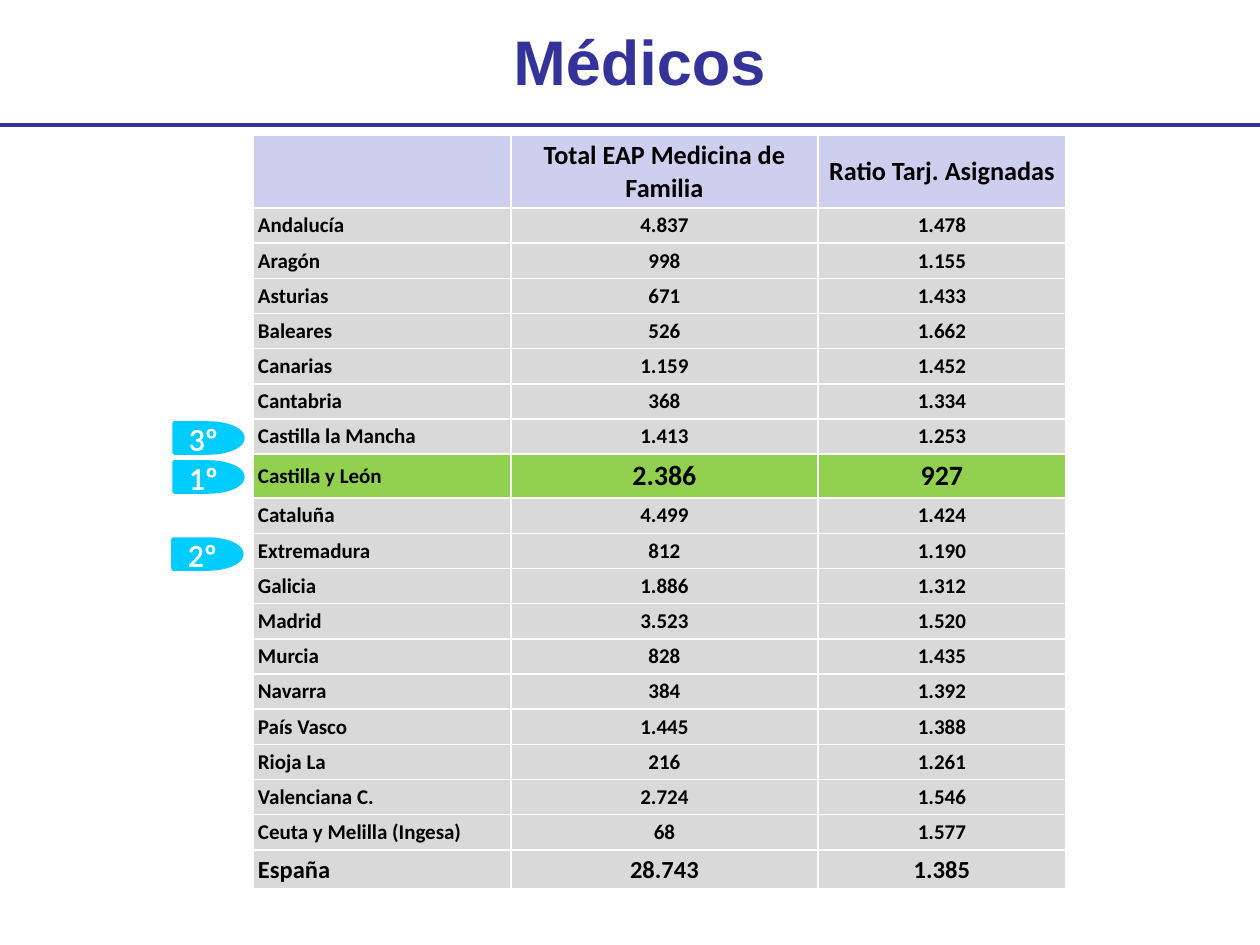
from lxml import etree
from pptx import Presentation
from pptx import util as u
from pptx.dml.color import RGBColor
from pptx.enum import shapes, text
from pptx.oxml import ns

COLOURS = {
    "navy": "333399",
    "cyan": "00CCFF",
    "white": "FFFFFF",
    "black": "000000",
    "header": "CECEEF",
    "grey": "D9D9D9",
    "green": "92D050",
}

HEADINGS = ("", "Total EAP Medicina de Familia", "Ratio Tarj. Asignadas")
REGIONS = [
    ("Andalucía", "4.837", "1.478"),
    ("Aragón", "998", "1.155"),
    ("Asturias", "671", "1.433"),
    ("Baleares", "526", "1.662"),
    ("Canarias", "1.159", "1.452"),
    ("Cantabria", "368", "1.334"),
    ("Castilla la Mancha", "1.413", "1.253"),
    ("Castilla y León", "2.386", "927"),
    ("Cataluña", "4.499", "1.424"),
    ("Extremadura", "812", "1.190"),
    ("Galicia", "1.886", "1.312"),
    ("Madrid", "3.523", "1.520"),
    ("Murcia", "828", "1.435"),
    ("Navarra", "384", "1.392"),
    ("País Vasco", "1.445", "1.388"),
    ("Rioja La", "216", "1.261"),
    ("Valenciana C.", "2.724", "1.546"),
    ("Ceuta y Melilla (Ingesa)", "68", "1.577"),
    ("España", "28.743", "1.385"),
]
ROW_STYLES = {
    "": (72, "header", 15, 15),
    "Castilla y León": (44, "green", 12, 16),
    "España": (39, "grey", 14, 14),
}
PLAIN_ROW = (35, "grey", 12, 12)
BADGES = [("1º", 174, 462), ("2º", 173, 539), ("3º", 174, 423)]


def px(length):
    return u.Emu(round(length * 914400 / 126))


def rgb(name):
    return RGBColor.from_string(COLOURS[name])


def add_line_fill(parent, tag, position, points, colour):
    line = etree.Element(ns.qn(tag), w=str(u.Pt(points)))
    fill = etree.SubElement(line, ns.qn("a:solidFill"))
    etree.SubElement(fill, ns.qn("a:srgbClr"), val=COLOURS[colour])
    parent.insert(position, line)


class SlideBuilder:
    def __init__(self, slide, body_font="Calibri", title_font="Arial"):
        self.slide = slide
        self.body_font = body_font
        self.title_font = title_font

    def put_text(self, frame, words, size, colour, font, bold=False, centred=True):
        frame.text = words
        para = frame.paragraphs[0]
        para.alignment = text.PP_ALIGN.CENTER if centred else text.PP_ALIGN.LEFT
        for span in para.runs:
            span.font.size = u.Pt(size)
            span.font.name = font
            span.font.bold = bold
            span.font.color.rgb = rgb(colour)
        return para

    def title(self, words, left, top, width, height):
        box = self.slide.shapes.add_textbox(px(left), px(top), px(width), px(height))
        frame = box.text_frame
        frame.word_wrap = True
        frame.auto_size = text.MSO_AUTO_SIZE.SHAPE_TO_FIT_TEXT
        self.put_text(frame, words, 36, "navy", self.title_font, bold=True)

    def rule(self, left, right, top):
        rule = self.slide.shapes.add_connector(
            shapes.MSO_CONNECTOR.STRAIGHT, px(left), px(top), px(right), px(top))
        rule.line.color.rgb = rgb("navy")
        rule.line.width = u.Pt(2.5)
        etree.SubElement(rule._element.spPr, ns.qn("a:effectLst"))

    def badge(self, words, left, top):
        badge = self.slide.shapes.add_shape(
            shapes.MSO_SHAPE.FLOWCHART_DELAY, px(left), px(top), px(69), px(30))
        badge.shadow.inherit = False
        badge.fill.solid()
        badge.fill.fore_color.rgb = rgb("cyan")
        badge.line.color.rgb = rgb("cyan")
        badge.line.width = u.Pt(2)
        frame = badge.text_frame
        frame.vertical_anchor = text.MSO_ANCHOR.MIDDLE
        para = self.put_text(frame, words, 18, "white", self.body_font)
        add_line_fill(para.runs[0]._r.get_or_add_rPr(), "a:ln", 0, 1.45, "white")

    def cell(self, cell, words, size, fill, centred):
        cell.margin_left = cell.margin_right = px(5)
        cell.margin_top = cell.margin_bottom = px(5)
        cell.vertical_anchor = text.MSO_ANCHOR.MIDDLE
        cell.fill.solid()
        cell.fill.fore_color.rgb = rgb(fill)
        self.put_text(cell.text_frame, words, size, "black", self.body_font, True, centred)
        properties = cell._tc.get_or_add_tcPr()
        for position, tag in enumerate(("a:lnL", "a:lnR", "a:lnT", "a:lnB")):
            add_line_fill(properties, tag, position, 1, "white")

    def table(self, rows, left, top, widths):
        styles = [ROW_STYLES.get(row[0], PLAIN_ROW) for row in rows]
        height = sum(style[0] for style in styles)
        table = self.slide.shapes.add_table(
            len(rows), len(widths), px(left), px(top), px(sum(widths)), px(height)).table
        table.first_row = table.horz_banding = False
        for column, width in zip(table.columns, widths):
            column.width = px(width)
        for index, (row, style) in enumerate(zip(rows, styles)):
            row_height, fill, label_size, value_size = style
            table.rows[index].height = px(row_height)
            for place, words in enumerate(row):
                size = value_size if place else label_size
                self.cell(table.cell(index, place), words, size, fill, place > 0)


def main():
    deck = Presentation()
    deck.slide_width, deck.slide_height = px(1260), px(945)
    page = SlideBuilder(deck.slides.add_slide(deck.slide_layouts[6]))
    page.title("Médicos", 213, 16, 853, 89)
    page.rule(0, 1260, 125)
    for words, left, top in BADGES:
        page.badge(words, left, top)
    page.table([HEADINGS, *REGIONS], 253, 135, (258, 307, 248))
    deck.save("out.pptx")


if __name__ == "__main__":
    main()
